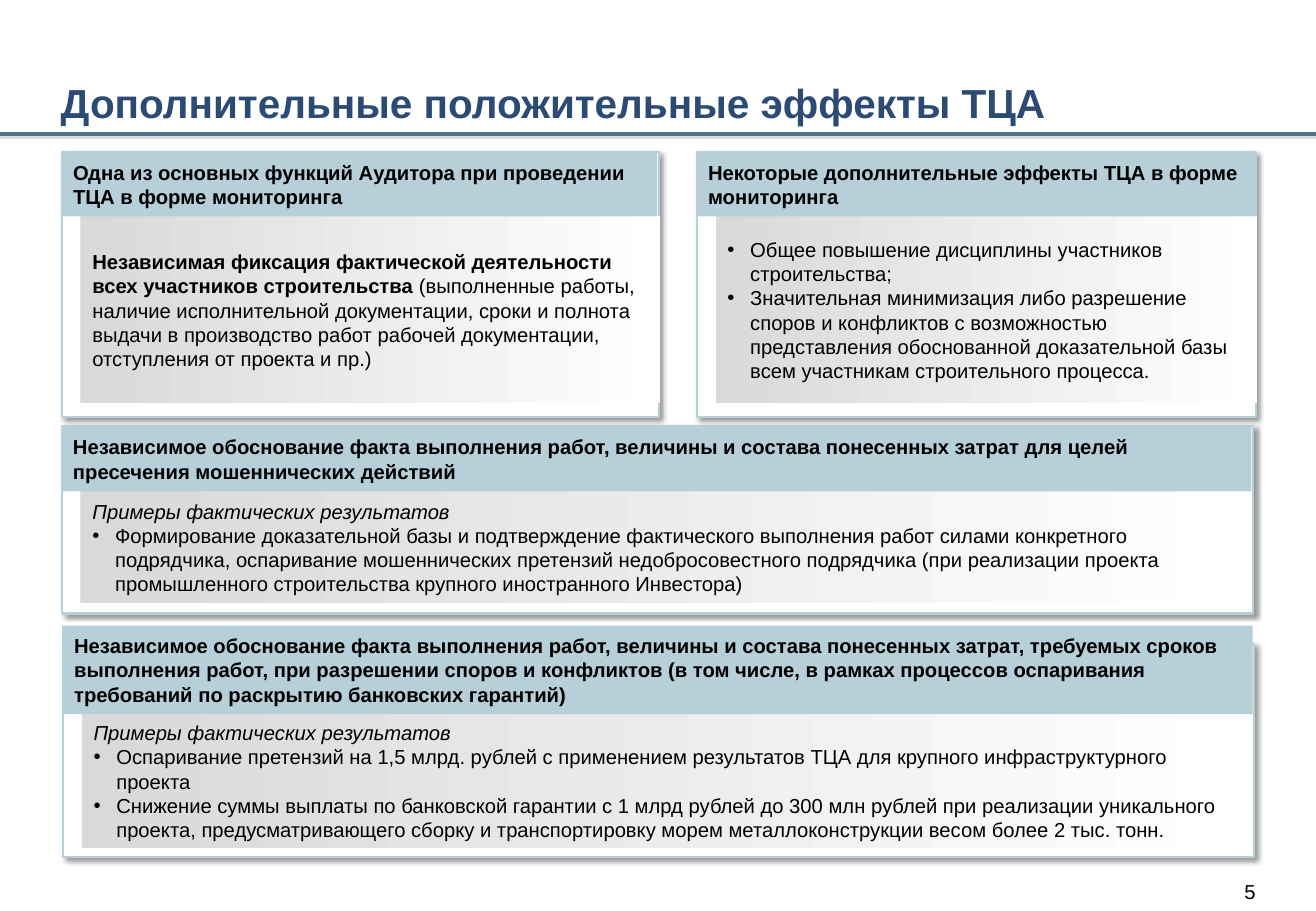
from dataclasses import dataclass

from pptx import Presentation
from pptx.dml.color import RGBColor
from pptx.enum.shapes import MSO_CONNECTOR as Connector, MSO_SHAPE as Shape
from pptx.enum.text import MSO_ANCHOR as Anchor, MSO_AUTO_SIZE as AutoSize, PP_ALIGN as Align
from pptx.oxml import parse_xml
from pptx.oxml.ns import nsdecls
from pptx.util import Pt

BLACK = RGBColor(0x00, 0x00, 0x00)
WHITE = RGBColor(0xFF, 0xFF, 0xFF)
NAVY = RGBColor(0x2B, 0x4A, 0x74)
TEAL = RGBColor(0x4C, 0x75, 0x8A)
PALE_BLUE = RGBColor(0xB6, 0xCF, 0xD8)
GREY = RGBColor(0xD9, 0xD9, 0xD9)

BULLET_INDENT = 13.5
BODY_INSET = 11.5
FRAME_SHIFT = 0.7


@dataclass
class Panel:
    left: float
    top: float
    width: float
    height: float
    head_height: float
    right_gap: float
    bottom_gap: float
    heading: str
    body: list  # paragraphs: (bulleted, [(text, style), ...])
    frame_drop: float = 0


class SlideBuilder:
    def __init__(self, page, font="Arial", size=12):
        self.page = page
        self.font = font
        self.size = size

    def add_span(self, para, text, style="", size=None, color=BLACK):
        span = para.add_run()
        span.text = text
        span.font.name = self.font
        span.font.size = Pt(size or self.size)
        span.font.bold = style == "bold"
        span.font.italic = style == "italic"
        span.font.color.rgb = color

    def add_bullet(self, para):
        props = para._p.get_or_add_pPr()
        props.set("marL", str(Pt(BULLET_INDENT)))
        props.set("indent", str(-Pt(BULLET_INDENT)))
        props.append(parse_xml(f'<a:buFont {nsdecls("a")} typeface="{self.font}"/>'))
        props.append(parse_xml(f'<a:buChar {nsdecls("a")} char="•"/>'))

    def set_shadow(self, shape, color, alpha, blur, distance, angle):
        shape._element.spPr.append(parse_xml(
            f'<a:effectLst {nsdecls("a")}><a:outerShdw blurRad="{Pt(blur)}" '
            f'dist="{Pt(distance)}" dir="{angle * 60000}" algn="tl" rotWithShape="0">'
            f'<a:srgbClr val="{color}"><a:alpha val="{alpha * 1000}"/></a:srgbClr>'
            '</a:outerShdw></a:effectLst>'))

    def set_frame(self, shape, anchor, side, end, wrap=True):
        frame = shape.text_frame
        frame.auto_size = AutoSize.NONE
        frame.word_wrap = wrap
        frame.vertical_anchor = anchor
        frame.margin_left = frame.margin_right = Pt(side)
        frame.margin_top = frame.margin_bottom = Pt(end)
        return frame

    def title(self, text, left, top, width, height):
        box = self.page.shapes.title
        box.left, box.top, box.width, box.height = map(Pt, (left, top, width, height))
        para = self.set_frame(box, Anchor.BOTTOM, 0, 3.6).paragraphs[0]
        para.alignment = Align.LEFT
        self.add_span(para, text, "bold", 24, NAVY)

    def rule(self, y, width):
        line = self.page.shapes.add_connector(
            Connector.STRAIGHT, Pt(width), Pt(y), Pt(0), Pt(y))
        line.line.color.rgb = TEAL
        line.line.width = Pt(2.25)
        self.set_shadow(line, GREY, 100, 0, 2, 90)

    def page_number(self, text, left, top, width, height):
        box = self.page.shapes.add_textbox(*map(Pt, (left, top, width, height)))
        para = self.set_frame(box, Anchor.BOTTOM, 0, 0, wrap=False).paragraphs[0]
        para.alignment = Align.RIGHT
        self.add_span(para, text)

    def rectangle(self, left, top, width, height, fill=None):
        shape = self.page.shapes.add_shape(
            Shape.RECTANGLE, *map(Pt, (left, top, width, height)))
        shape.line.fill.background()
        if fill is None:
            shape.fill.gradient()
            shape.fill.gradient_angle = 0
            for stop, color in zip(shape.fill.gradient_stops, (GREY, WHITE)):
                stop.color.rgb = color
        else:
            shape.fill.solid()
            shape.fill.fore_color.rgb = fill
        return shape

    def add_paragraphs(self, shape, paragraphs, end):
        frame = self.set_frame(shape, Anchor.MIDDLE, 7.2, end)
        for index, (bulleted, spans) in enumerate(paragraphs):
            para = frame.add_paragraph() if index else frame.paragraphs[0]
            para.alignment = Align.LEFT
            if bulleted:
                self.add_bullet(para)
            for text, style in spans:
                self.add_span(para, text, style)

    def panel(self, panel):
        # Outlined frame with a soft shadow
        frame = self.rectangle(panel.left + FRAME_SHIFT, panel.top + panel.frame_drop,
                               panel.width, panel.height - panel.frame_drop, WHITE)
        frame.line.color.rgb = PALE_BLUE
        frame.line.width = Pt(1.25)
        self.set_shadow(frame, BLACK, 40, 3, 2, 45)

        # Gradient body
        body = self.rectangle(panel.left + BODY_INSET, panel.top + panel.head_height,
                              panel.width - panel.right_gap,
                              panel.height - panel.head_height - panel.bottom_gap)
        body.shadow.inherit = False
        self.add_paragraphs(body, panel.body, 3.6)

        # Heading band
        head = self.rectangle(panel.left, panel.top, panel.width,
                              panel.head_height, PALE_BLUE)
        head.shadow.inherit = False
        self.add_paragraphs(head, [(False, [(panel.heading, "bold")])], 7.2)


def bullet(text):
    return True, [(text, "")]


EXAMPLES = (False, [("Примеры фактических результатов", "italic")])

PANELS = [
    Panel(36.2, 90, 353.5, 157, 38.3, 10, 7.8,
          "Одна из основных функций Аудитора при проведении ТЦА в форме мониторинга",
          [(False, [
              ("Независимая фиксация фактической деятельности всех участников "
               "строительства", "bold"),
              (" (выполненные работы, наличие исполнительной документации, сроки и "
               "полнота выдачи в производство работ рабочей документации, отступления "
               "от проекта и пр.)", "")])]),
    Panel(36.9, 370.8, 705.6, 137.5, 52.6, 20, 5.7,
          "Независимое обоснование факта выполнения работ, величины и состава "
          "понесенных затрат, требуемых сроков выполнения работ, при разрешении споров "
          "и конфликтов (в том числе, в рамках процессов оспаривания требований по "
          "раскрытию банковских гарантий)",
          [EXAMPLES,
           bullet("Оспаривание претензий на 1,5 млрд. рублей с применением результатов "
                  "ТЦА для крупного инфраструктурного проекта"),
           bullet("Снижение суммы выплаты по банковской гарантии с 1 млрд рублей до "
                  "300 млн рублей при реализации уникального проекта, предусматривающего "
                  "сборку и транспортировку морем металлоконструкции весом более "
                  "2 тыс. тонн.")],
          frame_drop=10.8),
    Panel(36.2, 252.7, 705.6, 111, 38.6, 20, 6,
          "Независимое обоснование факта выполнения работ, величины и состава "
          "понесенных затрат для целей пресечения мошеннических действий",
          [EXAMPLES,
           bullet("Формирование доказательной базы и подтверждение фактического "
                  "выполнения работ силами конкретного подрядчика, оспаривание "
                  "мошеннических претензий недобросовестного подрядчика (при реализации "
                  "проекта промышленного строительства крупного иностранного Инвестора)")]),
    Panel(412.6, 90, 331.2, 157, 38.3, 10, 7.8,
          "Некоторые дополнительные эффекты ТЦА в форме мониторинга",
          [bullet("Общее повышение дисциплины участников строительства;"),
           bullet("Значительная минимизация либо разрешение споров и конфликтов с "
                  "возможностью представления обоснованной доказательной базы всем "
                  "участникам строительного процесса.")]),
]


def main():
    deck = Presentation()
    deck.slide_width, deck.slide_height = Pt(780), Pt(540)
    page = deck.slides.add_slide(deck.slide_layouts[5])
    builder = SlideBuilder(page)

    # Title, rule and page number
    builder.rule(79.2, 780)
    builder.page_number("5", 714.2, 518.4, 30, 17.3)
    builder.title("Дополнительные положительные эффекты ТЦА", 36, 13, 600.5, 65.5)

    # Content panels
    for panel in PANELS:
        builder.panel(panel)

    deck.save("out.pptx")


if __name__ == "__main__":
    main()
